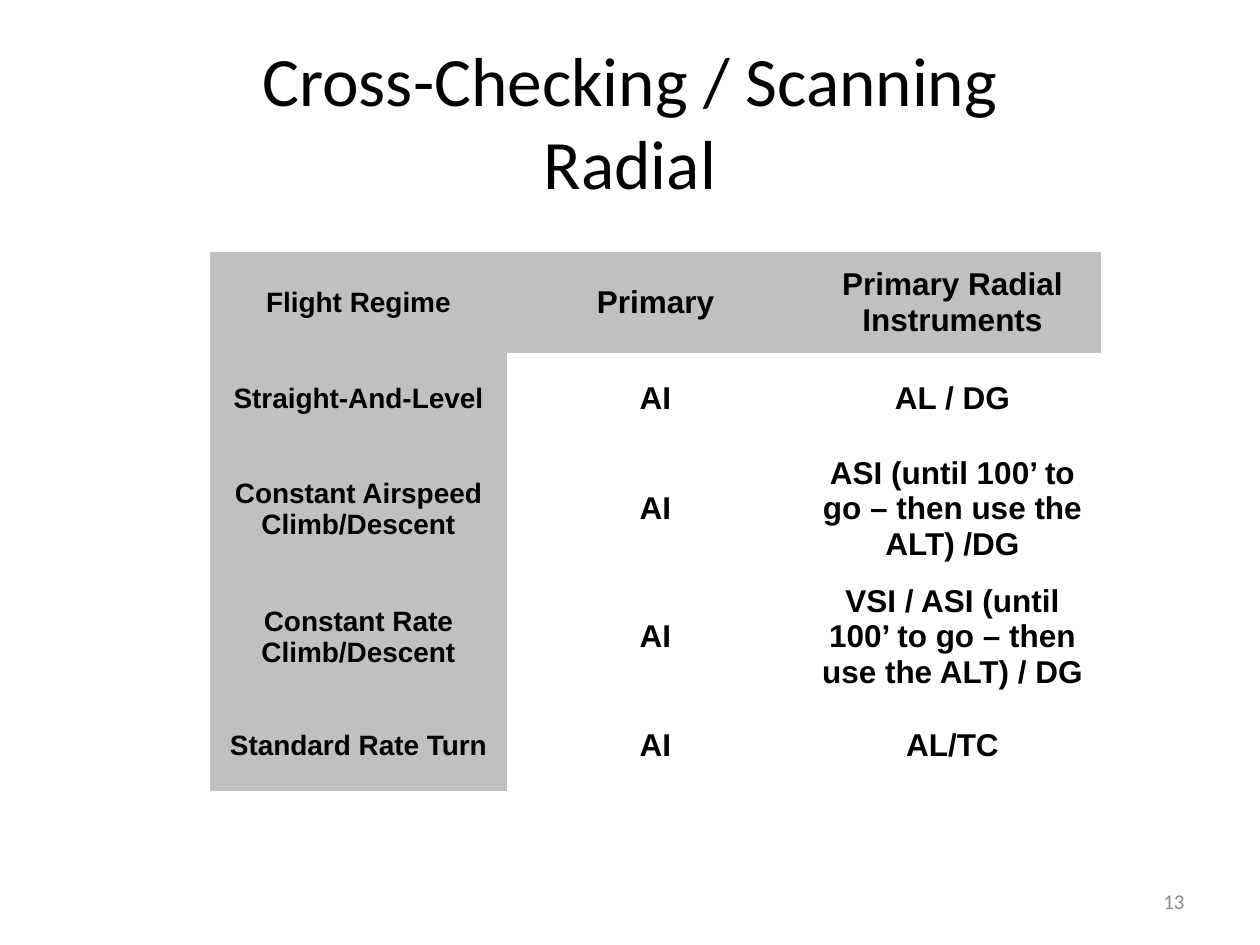
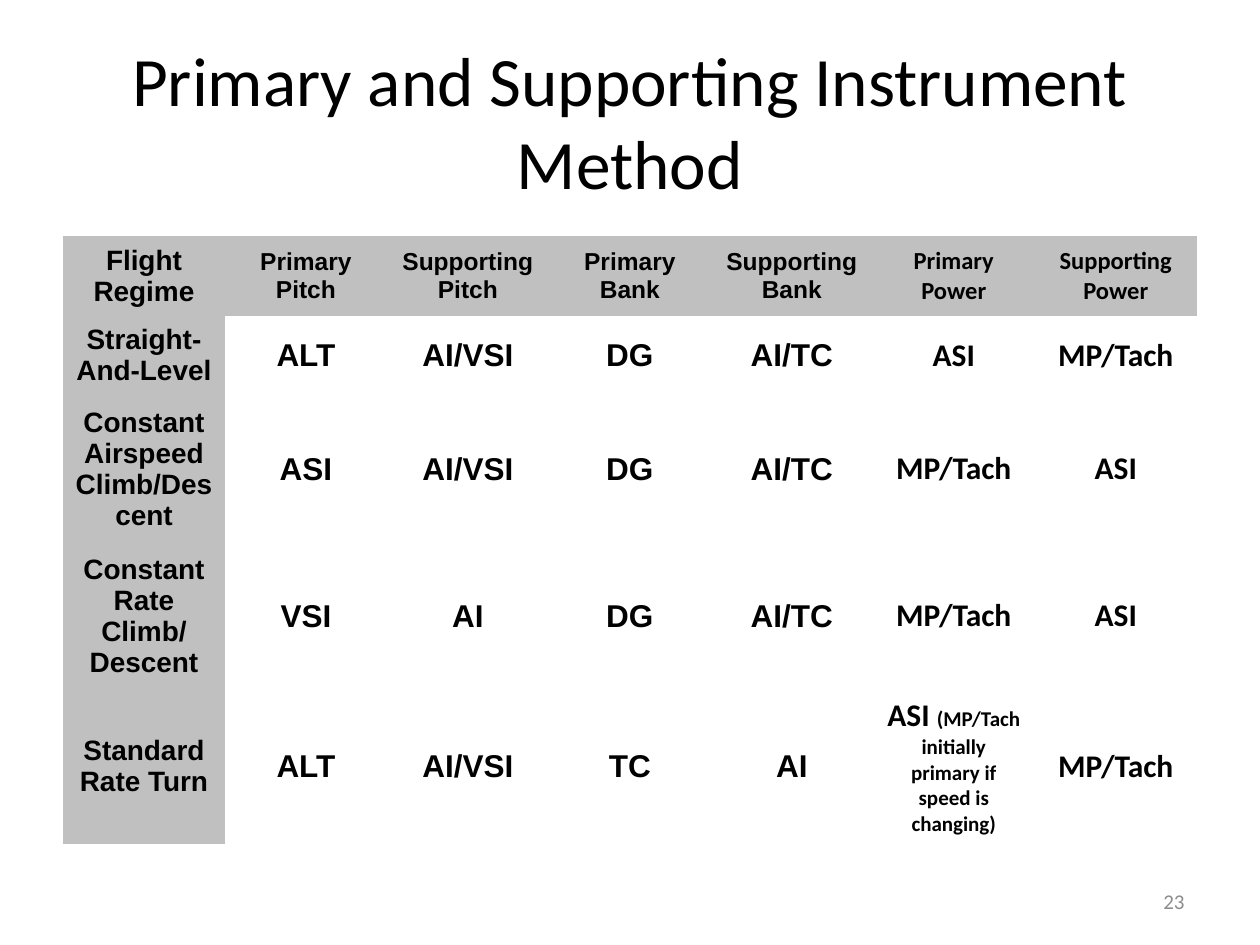
from copy import deepcopy
from dataclasses import dataclass

from pptx import Presentation
from pptx.dml.color import RGBColor
from pptx.enum.text import MSO_ANCHOR as Anchor, PP_ALIGN as Align
from pptx.oxml.ns import qn
from pptx.util import Emu, Pt

PX_PER_INCH = 126
BLACK, WHITE, SILVER, GREY = "000000", "FFFFFF", "C0C0C0", "8C8C8C"
HEADING_FONT, TABLE_FONT = "Calibri", "Arial"
NO_STYLE_NO_GRID = "{2D5ABB26-0587-4C30-8999-92F81FD0307C}"
REGIME_SIZE, BODY_SIZE, NOTE_SIZE = 16, 18, 12


@dataclass(frozen=True)
class Note:
    row: int
    column: int
    text: str


@dataclass(frozen=True)
class RegimeSlide:
    """In texts, \\n starts a paragraph and \\v breaks a line."""
    title: str
    number: str
    left: int
    top: int
    column_width: int
    row_heights: tuple[int, ...]
    rows: tuple[tuple[str, ...], ...]
    header_size: int
    calibri_from: int
    note: Note | None = None


SLIDES = (
    RegimeSlide(
        "Cross-Checking / Scanning\vRadial", "13", 210, 252, 297,
        (101, 91, 130, 118, 91),
        (
            ("Flight Regime", "Primary", "Primary Radial Instruments"),
            ("Straight-And-Level", "AI", "AL / DG"),
            ("Constant Airspeed Climb/Descent", "AI",
             "ASI (until 100’ to go – then use the ALT) /DG"),
            ("Constant Rate Climb/Descent", "AI",
             "VSI / ASI (until 100’ to go – then use the ALT) / DG"),
            ("Standard Rate Turn", "AI", "AL/TC"),
        ),
        header_size=18, calibri_from=3,
    ),
    RegimeSlide(
        "Primary and Supporting Instrument Method", "23", 63, 236, 162,
        (75, 75, 137, 137, 154),
        (
            ("Flight Regime", "Primary\vPitch", "Supporting\vPitch", "Primary\vBank",
             "Supporting\vBank", "Primary\nPower", "Supporting Power"),
            ("Straight-And-Level", "ALT", "AI/VSI", "DG", "AI/TC", "ASI", "MP/Tach"),
            ("Constant Airspeed Climb/Descent", "ASI", "AI/VSI", "DG", "AI/TC",
             "MP/Tach", "ASI"),
            ("Constant Rate Climb/\nDescent", "VSI", "AI", "DG", "AI/TC",
             "MP/Tach", "ASI"),
            ("Standard Rate Turn", "ALT", "AI/VSI", "TC", "AI", "ASI ", "MP/Tach"),
        ),
        header_size=14, calibri_from=5,
        note=Note(4, 5, "(MP/Tach initially primary if speed is changing)"),
    ),
)


def px(length: int) -> Emu:
    return Emu(round(length * 914400 / PX_PER_INCH))


def rgb(value: str) -> RGBColor:
    return RGBColor.from_string(value)


def add_spans(para, text: str, *, size: float, font: str, color: str = BLACK,
              bold: bool = False) -> None:
    """Append text to a paragraph, giving line breaks the format of the text."""
    for index, piece in enumerate(text.split("\v")):
        if index:
            para.add_line_break()
            para._p.findall(qn("a:br"))[-1].append(deepcopy(span._r.rPr))
        span = para.add_run()
        span.text = piece
        span.font.size = Pt(size)
        span.font.name = font
        span.font.bold = bold
        span.font.color.rgb = rgb(color)


def write(frame, text: str, *, align=Align.CENTER, **style) -> None:
    for index, line in enumerate(text.split("\n")):
        para = frame.add_paragraph() if index else frame.paragraphs[0]
        para.alignment = align
        add_spans(para, line, **style)


def add_box(page, text: str, left: int, top: int, width: int, height: int, **style):
    box = page.shapes.add_textbox(px(left), px(top), px(width), px(height))
    frame = box.text_frame
    frame.word_wrap = True
    frame.vertical_anchor = Anchor.MIDDLE
    write(frame, text, **style)
    return box


def add_regime_table(page, content: RegimeSlide) -> None:
    column_count = len(content.rows[0])
    holder = page.shapes.add_table(
        len(content.rows), column_count, px(content.left), px(content.top),
        px(content.column_width * column_count), px(sum(content.row_heights)))
    holder.element.find(".//" + qn("a:tableStyleId")).text = NO_STYLE_NO_GRID
    table = holder.table
    table.first_row = table.horz_banding = False
    for column in table.columns:
        column.width = px(content.column_width)
    for row_index, texts in enumerate(content.rows):
        table.rows[row_index].height = px(content.row_heights[row_index])
        for column_index, text in enumerate(texts):
            cell = table.cell(row_index, column_index)
            is_header = row_index == 0
            is_regime = column_index == 0
            cell.fill.solid()
            cell.fill.fore_color.rgb = rgb(SILVER if is_header or is_regime else WHITE)
            cell.vertical_anchor = Anchor.MIDDLE
            size = (REGIME_SIZE if is_regime
                    else content.header_size if is_header else BODY_SIZE)
            font = HEADING_FONT if column_index >= content.calibri_from else TABLE_FONT
            write(cell.text_frame, text, size=size, font=font, bold=True)
    if content.note:
        noted = table.cell(content.note.row, content.note.column)
        add_spans(noted.text_frame.paragraphs[0], content.note.text,
                  size=NOTE_SIZE, font=HEADING_FONT, bold=True)


def add_regime_slide(deck, content: RegimeSlide) -> None:
    page = deck.slides.add_slide(deck.slide_layouts[6])
    title = add_box(page, content.title, 63, 38, 1134, 158,
                    size=39.6, font=HEADING_FONT)
    title.text_frame.margin_bottom = 0
    add_regime_table(page, content)
    add_box(page, content.number, 903, 876, 294, 50,
            size=12, font=HEADING_FONT, color=GREY, align=Align.RIGHT)


def main() -> None:
    deck = Presentation()
    deck.slide_width, deck.slide_height = px(1260), px(945)
    for content in SLIDES:
        add_regime_slide(deck, content)
    deck.save("out.pptx")


if __name__ == "__main__":
    main()
